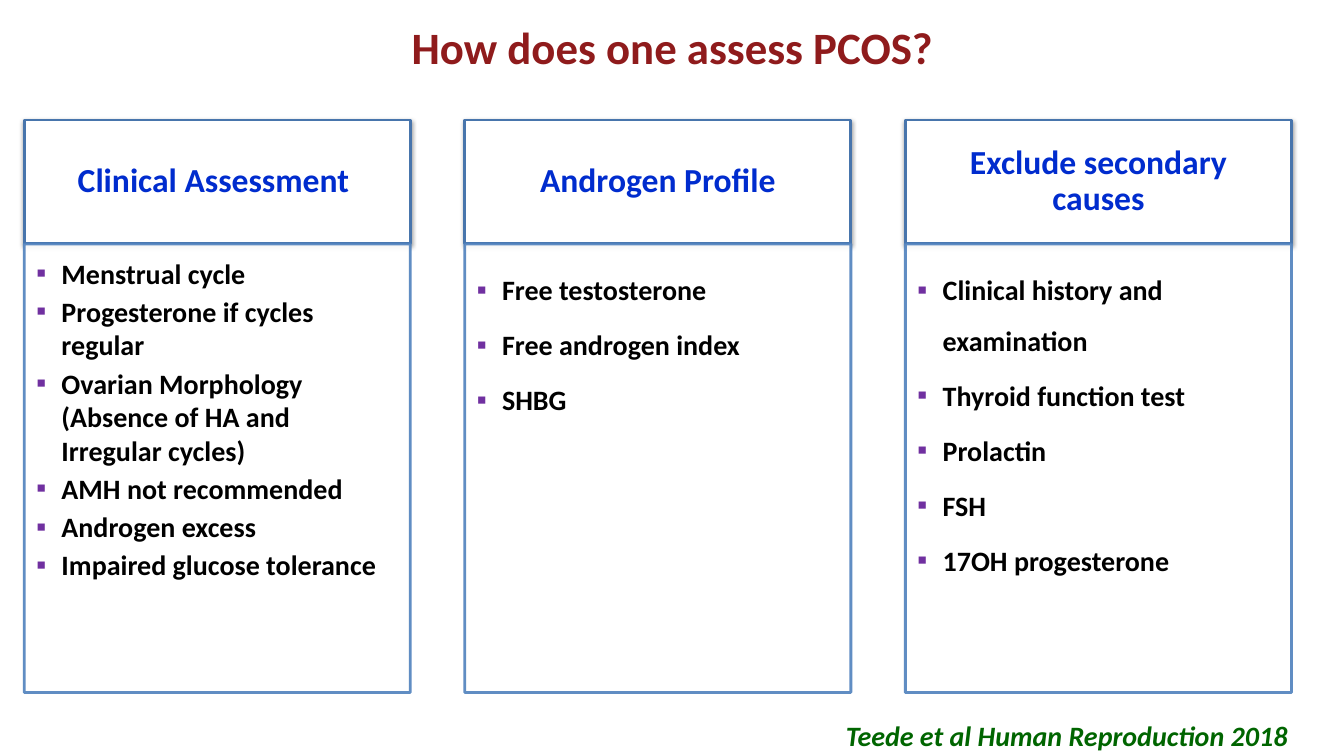
"""Builds the PCOS assessment slide: a title, three headed columns and a citation."""
from lxml.etree import SubElement
from pptx import Presentation
from pptx.dml.color import RGBColor
from pptx.enum.shapes import MSO_SHAPE as Preset
from pptx.enum.text import MSO_ANCHOR as Anchor, PP_ALIGN as Align
from pptx.oxml.ns import qn
from pptx.util import Inches, Pt

TITLE = "How does one assess PCOS?"
CITATION = "Teede et al Human Reproduction 2018"
COLUMNS = [
    ("Clinical Assessment ", 1.0, [
        "Menstrual cycle",
        "Progesterone if cycles regular",
        "Ovarian Morphology (Absence of HA and Irregular cycles)",
        "AMH not recommended",
        "Androgen excess",
        "Impaired glucose tolerance",
    ]),
    ("Androgen Profile", 1.5, [
        "Free testosterone",
        "Free androgen index",
        "SHBG",
    ]),
    ("Exclude secondary causes", 1.5, [
        "Clinical history and examination",
        "Thyroid function test",
        "Prolactin",
        "FSH",
        "17OH progesterone",
    ]),
]
LEFT, PITCH, WIDTH = 0.24, 4.37, 3.83
TOP, HEADING_HEIGHT, BODY_HEIGHT = 1.19, 1.23, 4.45


def rgb(code):
    return RGBColor.from_string(code)


def element(parent, tag, **attributes):
    return SubElement(parent, qn(tag), {k: str(v) for k, v in attributes.items()})


def write(paragraph, text, size, color, italic=False):
    run = paragraph.add_run()
    run.text = text
    font = run.font
    font.name, font.size, font.bold, font.italic = "Calibri", Pt(size), True, italic
    font.color.rgb = rgb(color)


def set_frame(shape, margins, anchor=Anchor.TOP, wrap=True):
    frame = shape.text_frame
    frame.word_wrap, frame.vertical_anchor = wrap, anchor
    (frame.margin_left, frame.margin_top,
     frame.margin_right, frame.margin_bottom) = map(Inches, margins)
    return frame


def add_text(slide, box, text, size, color, align, anchor, wrap=True, italic=False):
    shape = slide.shapes.add_textbox(*map(Inches, box))
    paragraph = set_frame(shape, (0.1, 0.05, 0.1, 0.05), anchor, wrap).paragraphs[0]
    paragraph.alignment = align
    write(paragraph, text, size, color, italic)


def add_panel(slide, box, line):
    panel = slide.shapes.add_shape(Preset.RECTANGLE, *map(Inches, box))
    panel.fill.solid()
    panel.fill.fore_color.rgb = rgb("FFFFFF")
    panel.line.color.rgb = rgb(line)
    panel.line.width = Pt(2)
    panel.shadow.inherit = False
    return panel


def add_heading(slide, left, text):
    heading = add_panel(slide, (left, TOP, WIDTH, HEADING_HEIGHT), "4875AC")
    effects = heading._element.spPr.find(qn("a:effectLst"))
    shadow = element(effects, "a:outerShdw", blurRad=Pt(3.1), dist=Pt(1.6),
                     dir=90 * 60000, rotWithShape=0)
    element(element(shadow, "a:srgbClr", val="000000"), "a:alpha", val=38000)
    paragraph = set_frame(heading, (0.19, 0.11, 0.19, 0.11), Anchor.MIDDLE).paragraphs[0]
    paragraph.alignment, paragraph.line_spacing = Align.CENTER, 0.9
    write(paragraph, text, 24, "002CCE")


def add_body(slide, left, items, spacing):
    body = add_panel(slide, (left, TOP + HEADING_HEIGHT, WIDTH, BODY_HEIGHT), "4F81BD")
    for color in body._element.spPr.iter(qn("a:srgbClr")):
        element(color, "a:alpha", val=90000)
    frame = set_frame(body, (0.12, 0.12, 0.16, 0.17))
    for index, item in enumerate(items):
        paragraph = frame.add_paragraph() if index else frame.paragraphs[0]
        paragraph.alignment = Align.LEFT
        paragraph.line_spacing, paragraph.space_after = spacing, Pt(3.3)
        properties = paragraph._p.get_or_add_pPr()
        properties.set("marL", str(Inches(0.25)))
        properties.set("indent", str(-Inches(0.25)))
        element(element(properties, "a:buClr"), "a:srgbClr", val="7030A0")
        element(properties, "a:buFont", typeface="Wingdings")
        properties[-1].set("typeface", "Calibri")
        element(properties, "a:buChar", char="▪")
        write(paragraph, item, 20, "000000")


def main():
    deck = Presentation()
    deck.slide_width, deck.slide_height = Inches(13.33), Inches(7.5)
    slide = deck.slides.add_slide(deck.slide_layouts[6])
    add_text(slide, (0.92, -0.26, 11.5, 1.45), TITLE, 32, "8F1B1C",
             Align.CENTER, Anchor.MIDDLE)
    for index, (heading, spacing, items) in enumerate(COLUMNS):
        left = LEFT + index * PITCH
        add_heading(slide, left, heading)
        add_body(slide, left, items, spacing)
    add_text(slide, (8.29, 7.08, 4.68, 0.44), CITATION, 20, "006500",
             Align.LEFT, Anchor.TOP, wrap=False, italic=True)
    deck.save("out.pptx")


if __name__ == "__main__":
    main()
